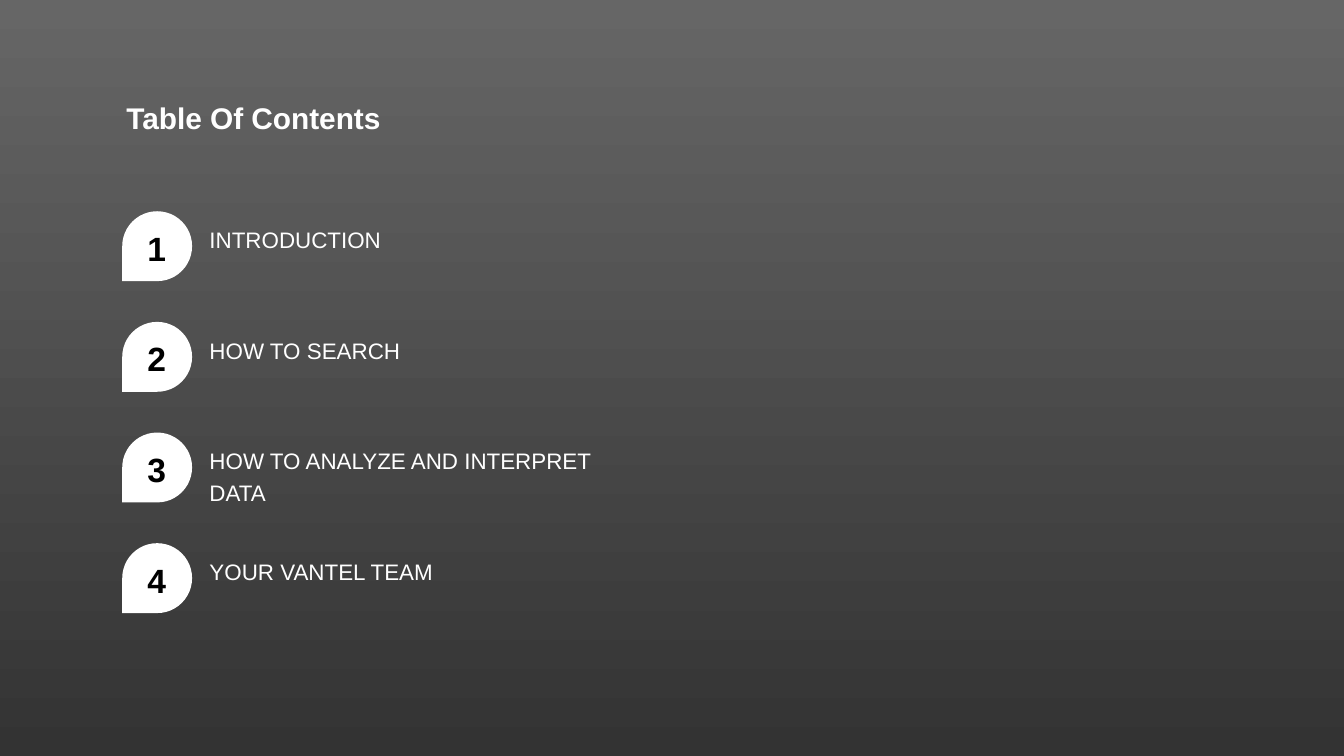
from pptx import Presentation
from pptx.dml.color import RGBColor
from pptx.enum.shapes import MSO_SHAPE
from pptx.enum.text import MSO_ANCHOR, PP_ALIGN
from pptx.util import Cm, Pt

WHITE = RGBColor(0xFF, 0xFF, 0xFF)
BLACK = RGBColor(0x00, 0x00, 0x00)
GRAY = RGBColor(0x66, 0x66, 0x66)
DARK_GRAY = RGBColor(0x33, 0x33, 0x33)
RECTANGLE = MSO_SHAPE.RECTANGLE
TEARDROP = MSO_SHAPE.TEAR
TOP = MSO_ANCHOR.TOP
BOTTOM = MSO_ANCHOR.BOTTOM
LEFT = PP_ALIGN.LEFT
CENTER = PP_ALIGN.CENTER

FIRST_TOP = 3.99
ROW_PITCH = 2.09
TOPICS = [
    "INTRODUCTION",
    "HOW TO SEARCH",
    "HOW TO ANALYZE AND INTERPRET DATA",
    "YOUR VANTEL TEAM",
]

deck = Presentation()
deck.slide_width = Cm(25.4)
deck.slide_height = Cm(14.28)
page = deck.slides.add_slide(deck.slide_layouts[6])


def add_text(text, left, top, width, height, size, color, bold=False,
             align=LEFT, anchor=TOP, inset=0, wrap=True):
    box = page.shapes.add_textbox(Cm(left), Cm(top), Cm(width), Cm(height))
    frame = box.text_frame
    frame.word_wrap = wrap
    frame.vertical_anchor = anchor
    frame.margin_left = frame.margin_right = Cm(inset)
    frame.margin_top = frame.margin_bottom = Cm(inset)
    para = frame.paragraphs[0]
    para.text = text
    para.alignment = align
    para.font.name = "Arial"
    para.font.size = Pt(size)
    para.font.bold = bold
    para.font.color.rgb = color
    return para


backdrop = page.shapes.add_shape(RECTANGLE, 0, 0, deck.slide_width, deck.slide_height)
backdrop.shadow.inherit = False
backdrop.line.fill.background()
backdrop.fill.gradient()
backdrop.fill.gradient_angle = 270
for stop, color in zip(backdrop.fill.gradient_stops, (GRAY, DARK_GRAY)):
    stop.color.rgb = color

add_text("Table Of Contents", 2.26, 1.75, 5.11, 0.94, 16, WHITE,
         bold=True, inset=0.13, wrap=False)

for index, topic in enumerate(TOPICS):
    top = FIRST_TOP + index * ROW_PITCH
    label = add_text(topic, 3.96, top + 0.18, 8.1, 1.7, 12, WHITE)
    label.line_spacing = 1.2

    drop = page.shapes.add_shape(TEARDROP, Cm(2.31), Cm(top), Cm(1.32), Cm(1.32))
    drop.rotation = 180
    drop.shadow.inherit = False
    drop.fill.solid()
    drop.fill.fore_color.rgb = WHITE
    drop.line.fill.background()

    add_text(str(index + 1), 2.26, top + 0.16, 1.4, 1.04, 18, BLACK,
             bold=True, align=CENTER, anchor=BOTTOM, inset=0.13)

deck.save("out.pptx")
